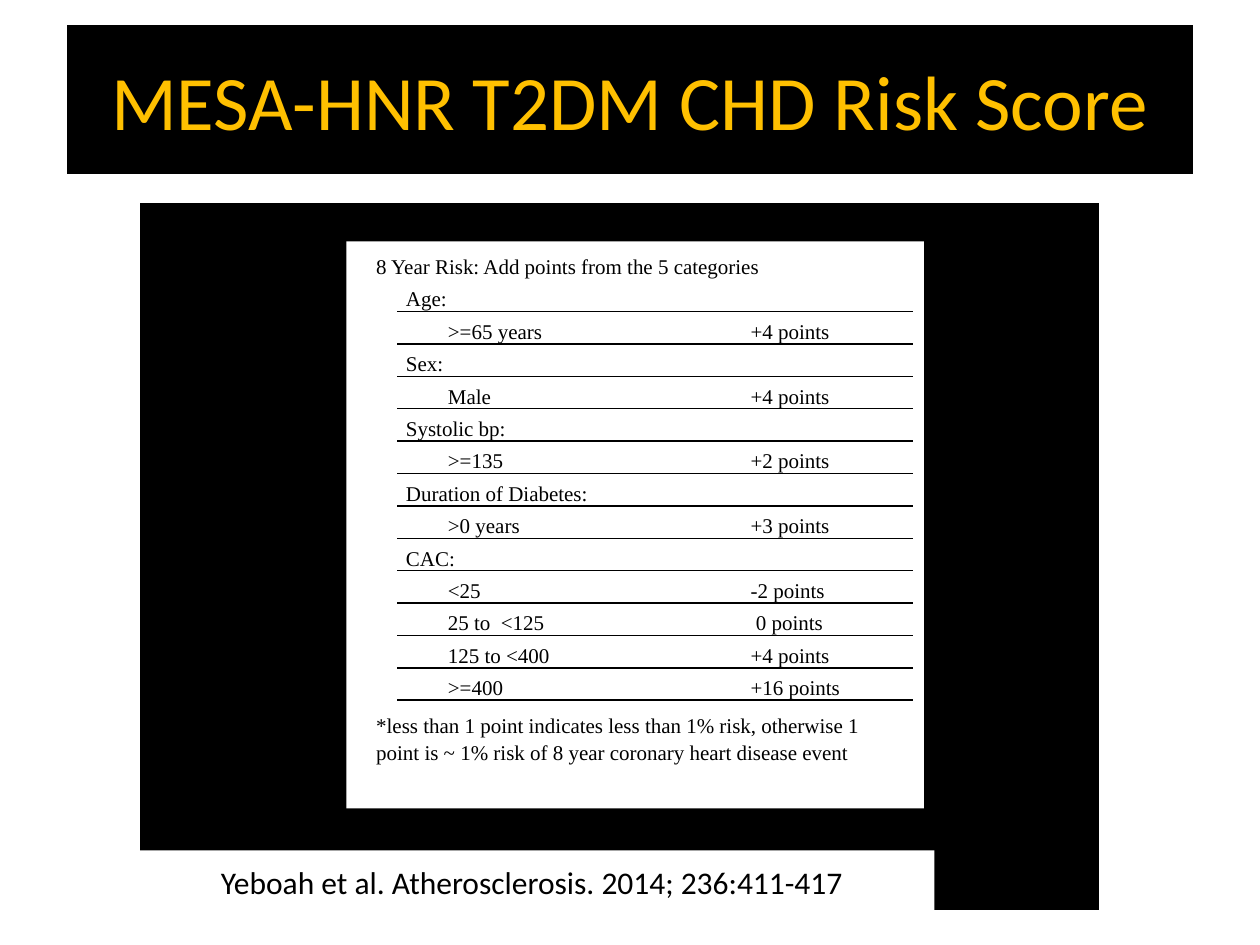
from lxml.etree import SubElement
from pptx import Presentation
from pptx.dml.color import RGBColor as Color
from pptx.enum.shapes import MSO_SHAPE as Shape
from pptx.enum.text import MSO_ANCHOR as Anchor, PP_ALIGN as Align
from pptx.oxml import parse_xml
from pptx.oxml.ns import nsdecls, qn
from pptx.util import Pt

TITLE = "MESA-HNR T2DM CHD Risk Score"
CITATION = "Yeboah et al. Atherosclerosis. 2014; 236:411-417 "
HEADING = "8 Year Risk: Add points from the 5 categories"
FOOTNOTE = (
    "*less than 1 point indicates less than 1% risk, otherwise 1 point is "
    "~ 1% risk of 8 year coronary heart disease event"
)
CATEGORIES = [
    ("Age:", [(">=65 years", "+4 points")]),
    ("Sex:", [("Male", "+4 points")]),
    ("Systolic bp:", [(">=135", "+2 points")]),
    ("Duration of Diabetes:", [(">0 years", "+3 points")]),
    ("CAC:", [
        ("<25", "-2 points"),
        ("25 to  <125", " 0 points"),
        ("125 to <400", "+4 points"),
        (">=400", "+16 points"),
    ]),
]

BLACK, WHITE, GOLD = (Color.from_string(c) for c in ("000000", "FFFFFF", "FFC000"))
THEME = {
    "title": {"name": "Calibri", "size": Pt(44), "color": GOLD},
    "citation": {"name": "Calibri", "size": Pt(18), "color": BLACK},
    "table": {"name": "Times New Roman", "size": Pt(12), "color": BLACK},
    "frame_width": Pt(4.5),
    "rule_width": Pt(1),
    "plain_table": "{2D5ABB26-0587-4C30-8999-92F81FD0307C}",
}
PANELS = [
    ((78, 114, 552, 408), BLACK, True, "", None),
    ((198, 138, 330, 324), WHITE, False, "", None),
    ((36, 12, 648, 90), BLACK, True, TITLE, "title"),
]
CITATION_PANEL = ((78, 486, 456, 36), WHITE, False, CITATION, "citation")
TABLE_LEFT, TABLE_TOP = 210, 141
COLUMN_WIDTHS = (17, 197, 98)
ROW_HEIGHT, FOOTNOTE_HEIGHT = 18.52, 37
CELL_FORMAT = {
    "margin_left": Pt(5), "margin_right": Pt(5),
    "margin_top": 0, "margin_bottom": 0, "vertical_anchor": Anchor.BOTTOM,
}
OPTION_INDENT = 24


def set_font(font, style):
    for name in ("name", "size"):
        setattr(font, name, style[name])
    font.color.rgb = style["color"]


def add_panel(slide, box, fill, framed, text, style):
    shape = slide.shapes.add_shape(Shape.RECTANGLE, *map(Pt, box))
    shape.shadow.inherit = False
    shape.fill.solid()
    shape.fill.fore_color.rgb = fill
    if framed:
        shape.line.color.rgb = WHITE
        shape.line.width = THEME["frame_width"]
    else:
        shape.line.fill.background()
    if text:
        shape.text_frame.word_wrap = True
        shape.text_frame.vertical_anchor = Anchor.MIDDLE
        paragraph = shape.text_frame.paragraphs[0]
        paragraph.alignment = Align.CENTER
        run = paragraph.add_run()
        run.text = text
        set_font(run.font, THEME[style])


def format_cell(cell, text="", indent=0):
    for name, value in CELL_FORMAT.items():
        setattr(cell, name, value)
    cell.margin_left += Pt(indent)
    cell.fill.background()
    paragraph = cell.text_frame.paragraphs[0]
    paragraph.line_spacing = 1.15
    if text:
        run = paragraph.add_run()
        run.text = text
        set_font(run.font, THEME["table"])
    else:
        size = str(int(THEME["table"]["size"].pt * 100))
        SubElement(paragraph._p, qn("a:endParaRPr"), sz=size)


def add_rule(cell, side):
    cell._tc.get_or_add_tcPr().insert(0, parse_xml(
        f'<a:{side} {nsdecls("a")} w="{THEME["rule_width"]}"><a:solidFill>'
        f'<a:srgbClr val="{BLACK}"/></a:solidFill></a:{side}>'
    ))


def add_score_table(slide):
    rows = [(HEADING, "", "", 0)]
    for category, options in CATEGORIES:
        rows.append(("", category, "", 0))
        rows += [("", option, points, OPTION_INDENT) for option, points in options]
    rows.append((FOOTNOTE, "", "", 0))
    last = len(rows) - 1
    heights = [ROW_HEIGHT] * last + [FOOTNOTE_HEIGHT]
    frame = slide.shapes.add_table(
        len(rows), len(COLUMN_WIDTHS), Pt(TABLE_LEFT), Pt(TABLE_TOP),
        Pt(sum(COLUMN_WIDTHS)), Pt(sum(heights)),
    )
    table = frame.table
    table.first_row = table.horz_banding = False
    table._tbl.tblPr.find(qn("a:tableStyleId")).text = THEME["plain_table"]
    for column, width in zip(table.columns, COLUMN_WIDTHS):
        column.width = Pt(width)
    for index, (*texts, indent) in enumerate(rows):
        table.rows[index].height = Pt(heights[index])
        for column, text in enumerate(texts):
            cell = table.cell(index, column)
            format_cell(cell, text, indent if column == 1 else 0)
            if column and 0 < index < last - 1:
                add_rule(cell, "lnB")
            if column and 1 < index < last:
                add_rule(cell, "lnT")
    for index in (0, last):
        table.cell(index, 0).merge(table.cell(index, len(COLUMN_WIDTHS) - 1))


def main():
    presentation = Presentation()
    presentation.slide_width, presentation.slide_height = Pt(720), Pt(540)
    slide = presentation.slides.add_slide(presentation.slide_layouts[6])
    for panel in PANELS:
        add_panel(slide, *panel)
    add_score_table(slide)
    add_panel(slide, *CITATION_PANEL)
    presentation.save("out.pptx")


if __name__ == "__main__":
    main()
